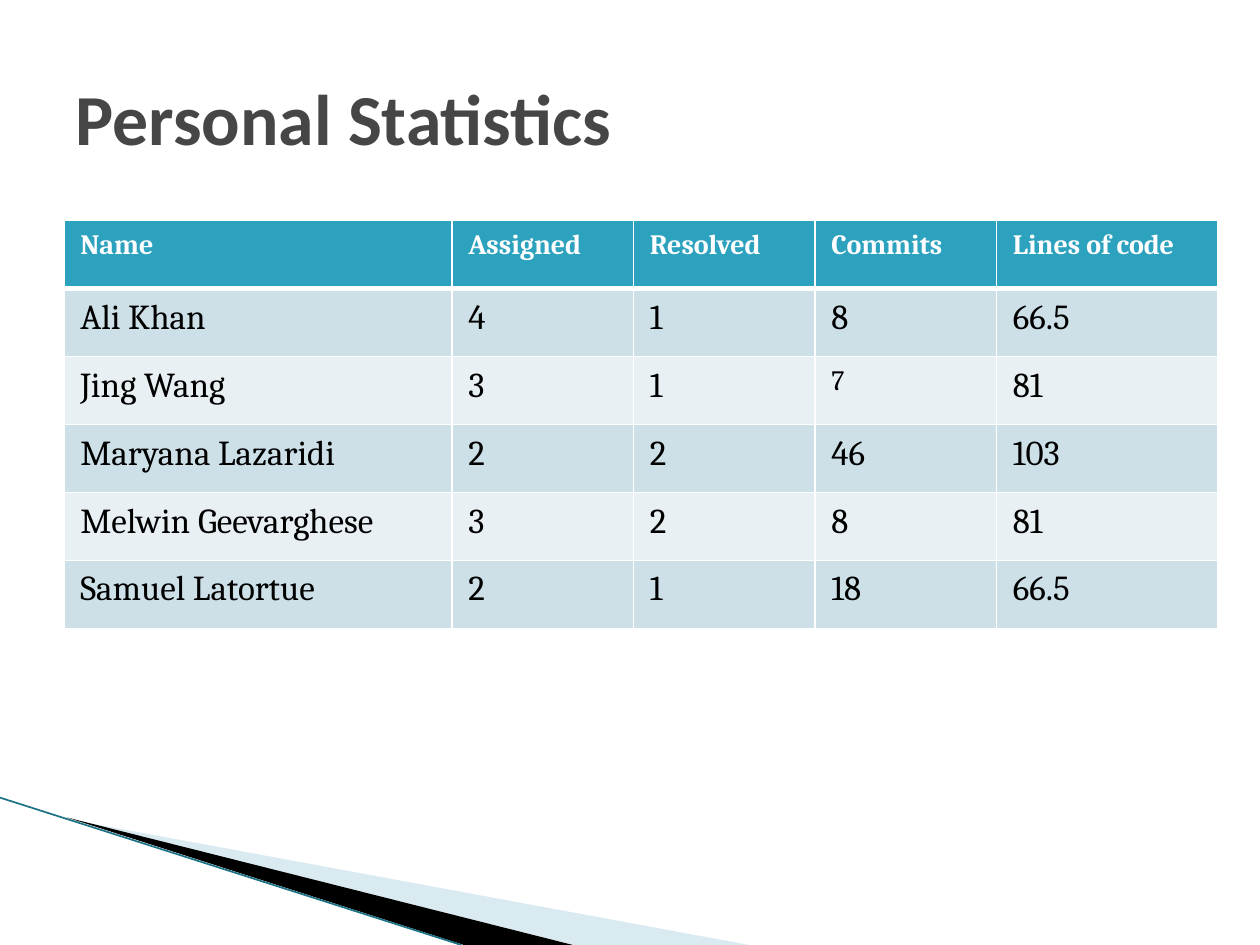
from lxml.etree import SubElement
from pptx import Presentation
from pptx.dml.color import RGBColor
from pptx.enum.shapes import MSO_CONNECTOR
from pptx.enum.text import MSO_ANCHOR, MSO_AUTO_SIZE, PP_ALIGN
from pptx.oxml.ns import qn
from pptx.util import Cm, Pt

COLORS = {
    "title": "464646",
    "header": "2DA2BF",
    "band_dark": "CDE0E8",
    "band_light": "E8F0F4",
    "white": "FFFFFF",
    "black": "000000",
    "pale_wedge": "A0CBDC",
    "edge": "1B7186",
}

COLUMN_WIDTHS = [7.82, 3.66, 3.66, 3.66, 4.45]
ROW_HEIGHT = 1.37
ROWS = [
    ["Name", "Assigned", "Resolved", "Commits", "Lines of code"],
    ["Ali Khan", "4", "1", "8", "66.5"],
    ["Jing Wang", "3", "1", "7", "81"],
    ["Maryana Lazaridi", "2", "2", "46", "103"],
    ["Melwin Geevarghese", "3", "2", "8", "81"],
    ["Samuel Latortue", "2", "1", "18", "66.5"],
]
SMALL_CELL = (2, 3)  # the one body cell set at header size


def rgb(name):
    return RGBColor.from_string(COLORS[name])


def add_run(p, text, font, size, color, bold=False):
    r = p.add_run()
    r.text = text
    r.font.name = font
    r.font.size = Pt(size)
    r.font.bold = bold
    r.font.color.rgb = rgb(color)


def add_wedge(s, points, color, opacity=100):
    corners = [(Cm(x), Cm(y)) for x, y in points]
    builder = s.shapes.build_freeform(*corners[0])
    builder.add_line_segments(corners[1:], close=True)
    sp = builder.convert_to_shape()
    sp.shadow.inherit = False
    sp.fill.solid()
    sp.fill.fore_color.rgb = rgb(color)
    sp.line.fill.background()
    if opacity < 100:
        clr = sp._element.spPr.find(qn("a:solidFill"))[0]
        SubElement(clr, qn("a:alpha"), val=str(opacity * 1000))


def add_edge(s, x1, y1, x2, y2):
    line = s.shapes.add_connector(
        MSO_CONNECTOR.STRAIGHT, Cm(x1), Cm(y1), Cm(x2), Cm(y2))
    line.line.color.rgb = rgb("edge")
    line.line.width = Pt(0.95)
    SubElement(line._element.spPr, qn("a:effectLst"))


def set_title(s, text):
    sp = s.shapes.title
    sp.left, sp.top, sp.width, sp.height = Cm(1.27), Cm(0.76), Cm(22.86), Cm(3.18)
    tf = sp.text_frame
    tf.auto_size = MSO_AUTO_SIZE.NONE
    tf.vertical_anchor = MSO_ANCHOR.MIDDLE
    p = tf.paragraphs[0]
    p.alignment = PP_ALIGN.LEFT
    add_run(p, text, "Calibri", 41, "title", bold=True)


def set_borders(cell, top, bottom):
    # Borders must come before the fill in the cell properties
    tc_pr = cell._tc.get_or_add_tcPr()
    for side, width in (("L", 1), ("R", 1), ("T", top), ("B", bottom)):
        ln = SubElement(tc_pr, qn(f"a:ln{side}"), w=str(Pt(width)))
        fill = SubElement(ln, qn("a:solidFill"))
        SubElement(fill, qn("a:srgbClr"), val=COLORS["white"])


def format_cell(cell, text, row, col):
    header = row == 0
    set_borders(cell, top=3 if row == 1 else 1, bottom=3 if header else 1)
    cell.fill.solid()
    band = "band_dark" if row % 2 else "band_light"
    cell.fill.fore_color.rgb = rgb("header" if header else band)
    cell.margin_left = cell.margin_right = Cm(0.33)
    cell.margin_top = cell.margin_bottom = Cm(0.18)
    size = 16 if header or (row, col) == SMALL_CELL else 20
    add_run(cell.text_frame.paragraphs[0], text, "Cambria", size,
            "white" if header else "black", bold=header)


def add_statistics_table(s, left, top):
    table = s.shapes.add_table(
        len(ROWS), len(COLUMN_WIDTHS), Cm(left), Cm(top),
        Cm(sum(COLUMN_WIDTHS)), Cm(ROW_HEIGHT * len(ROWS))).table
    for column, width in zip(table.columns, COLUMN_WIDTHS):
        column.width = Cm(width)
    for i, values in enumerate(ROWS):
        table.rows[i].height = Cm(ROW_HEIGHT)
        for j, text in enumerate(values):
            format_cell(table.cell(i, j), text, i, j)


def main():
    prs = Presentation()
    prs.slide_width, prs.slide_height = Cm(25.4), Cm(19.05)
    s = prs.slides.add_slide(prs.slide_layouts[5])

    # Corner decoration
    add_wedge(s, [(1.4, 16.52), (15.1, 19.05), (11.58, 19.05)], "pale_wedge", 40)
    add_wedge(s, [(1.35, 16.48), (11.55, 19.05), (9.35, 19.05)], "black")
    add_edge(s, 0, 16.08, 9.3, 19.05)

    # Title and table
    set_title(s, "Personal Statistics")
    add_statistics_table(s, 1.29, 4.45)

    prs.save("out.pptx")


if __name__ == "__main__":
    main()
